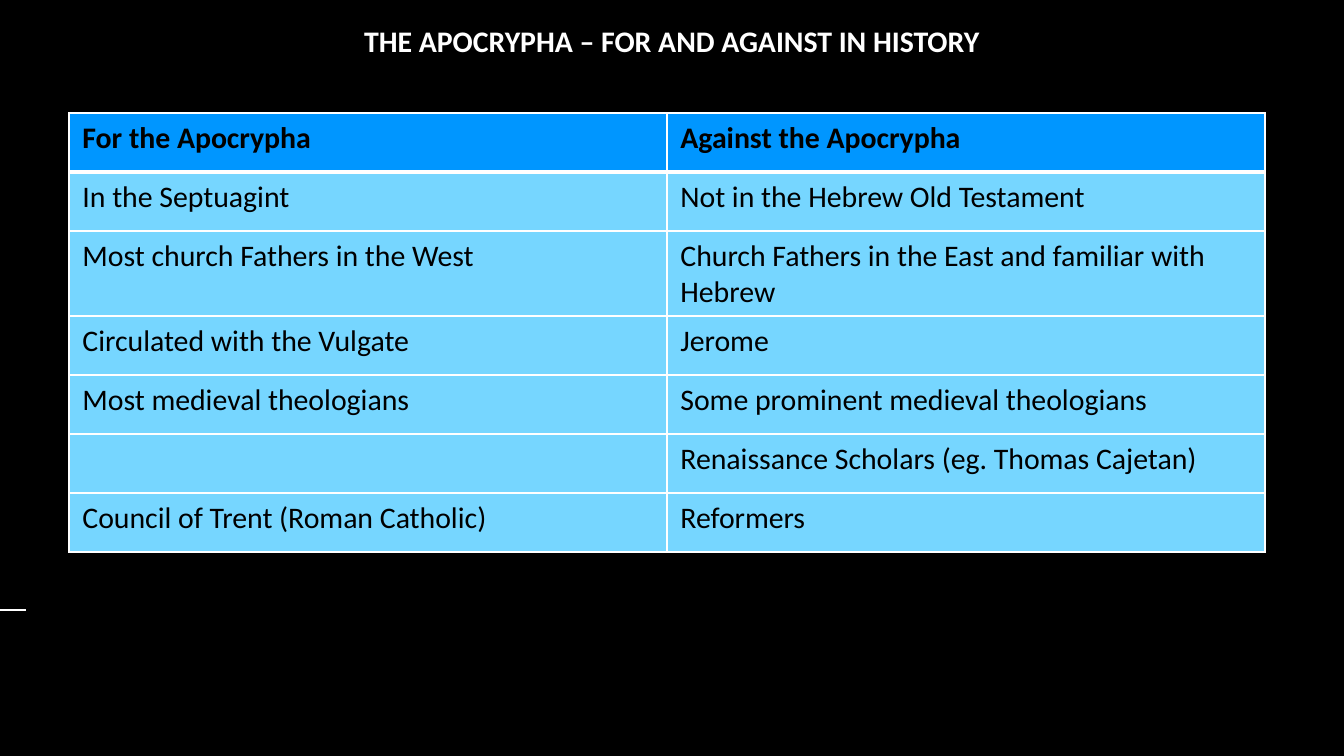
from lxml import etree
from pptx import Presentation
from pptx.dml.color import RGBColor
from pptx.enum.shapes import MSO_CONNECTOR
from pptx.enum.text import PP_ALIGN
from pptx.oxml.ns import qn
from pptx.util import Pt

STRAIGHT = MSO_CONNECTOR.STRAIGHT
CENTER = PP_ALIGN.CENTER

TITLE = "THE APOCRYPHA – FOR AND AGAINST IN HISTORY"
ROWS = [
    ("For the Apocrypha", "Against the Apocrypha"),
    ("In the Septuagint", "Not in the Hebrew Old Testament"),
    ("Most church Fathers in the West", "Church Fathers in the East and familiar with Hebrew"),
    ("Circulated with the Vulgate", "Jerome"),
    ("Most medieval theologians", "Some prominent medieval theologians"),
    ("", "Renaissance Scholars (eg. Thomas Cajetan)"),
    ("Council of Trent (Roman Catholic)", "Reformers"),
]
WHITE, BLACK, HEADER, BODY = "FFFFFF", "000000", "0096FF", "76D6FF"
TABLE_X, TABLE_Y, COL_W, ROW_H = 69, 113, 598, 59


def px(n):
    return round(n * 914400 / 134.4)


def rgb(value):
    return RGBColor.from_string(value)


def style(p, color, bold):
    for r in p.runs:
        r.font.name = "Calibri"
        r.font.size = Pt(16)
        r.font.bold = bold
        r.font.color.rgb = rgb(color)


def add_borders(cell, widths):
    tc_pr = cell._tc.get_or_add_tcPr()
    for side, width in widths.items():
        ln = etree.SubElement(tc_pr, qn(f"a:ln{side}"), w=str(Pt(width)))
        fill = etree.SubElement(ln, qn("a:solidFill"))
        etree.SubElement(fill, qn("a:srgbClr"), val=WHITE)


prs = Presentation()
prs.slide_width, prs.slide_height = px(1344), px(756)
s = prs.slides.add_slide(prs.slide_layouts[6])
s.background.fill.solid()
s.background.fill.fore_color.rgb = rgb(BLACK)

rule = s.shapes.add_connector(STRAIGHT, px(-22), px(610), px(26), px(610))
rule.line.color.rgb = rgb(WHITE)
rule.line.width = Pt(0.75)
etree.SubElement(rule._element.spPr, qn("a:effectLst"))

title = s.shapes.add_textbox(px(338), px(16), px(668), px(46))
tf = title.text_frame
tf.word_wrap = True
tf.text = TITLE
p = tf.paragraphs[0]
p.alignment = CENTER
style(p, WHITE, True)

table = s.shapes.add_table(len(ROWS), 2, px(TABLE_X), px(TABLE_Y),
                           px(2 * COL_W), px(len(ROWS) * ROW_H)).table
for col in table.columns:
    col.width = px(COL_W)
for i, texts in enumerate(ROWS):
    table.rows[i].height = px(ROW_H)
    for j, text in enumerate(texts):
        cell = table.cell(i, j)
        add_borders(cell, {"L": 1, "R": 1, "T": 3 if i == 1 else 1, "B": 3 if i == 0 else 1})
        cell.fill.solid()
        cell.fill.fore_color.rgb = rgb(HEADER if i == 0 else BODY)
        if text:
            cell.text_frame.text = text
            style(cell.text_frame.paragraphs[0], BLACK, i == 0)

prs.save("out.pptx")
